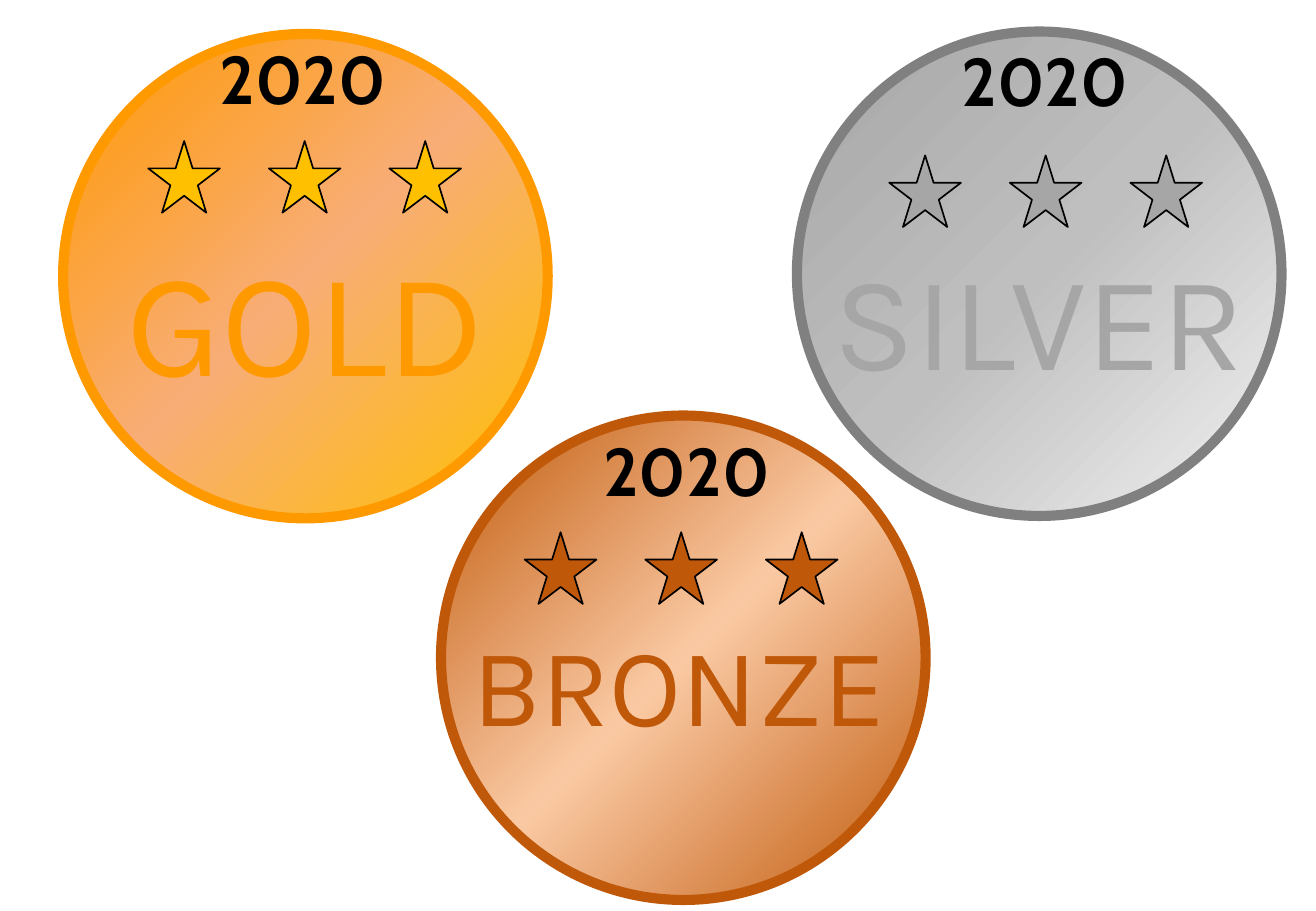
"""Build a slide with gold, silver and bronze medals."""
from copy import deepcopy

from pptx import Presentation
from pptx.dml.color import RGBColor
from pptx.enum.shapes import MSO_SHAPE
from pptx.enum.text import MSO_AUTO_SIZE, PP_ALIGN
from pptx.util import Cm, Pt

OVAL, STAR = MSO_SHAPE.OVAL, MSO_SHAPE.STAR_5_POINT
CENTER = PP_ALIGN.CENTER
GROW = MSO_AUTO_SIZE.SHAPE_TO_FIT_TEXT

MEDALS = [
    {"name": "SILVER", "size": 80, "ink": "A6A6A6", "rim": "808080",
     "shades": ["A6A6A6", "BFBFBF", "F2F2F2"], "star": "A6A6A6",
     "disc": (16.66, 0.66), "label": (16.66, 4.8, 10.13, 3.68),
     "stars": (18.59, 3.25), "year": (19.02, 0.69)},
    {"name": "GOLD", "size": 88, "ink": "FF9900", "rim": "FF9900",
     "shades": ["FF9900", "F8AD76", "FFC000"], "star": "FFC000",
     "disc": (1.32, 0.71), "label": (1.07, 4.65, 10.64, 4.01),
     "stars": (3.1, 2.95), "year": (3.51, 0.66)},
    {"name": "BRONZE", "size": 66, "ink": "C0580A", "rim": "C0580A",
     "shades": ["C0580A", "FAC9A3", "C0580A"], "star": "C0580A",
     "disc": (9.22, 8.69), "label": (9.14, 12.75, 10.13, 3.07),
     "stars": (10.97, 11.13), "year": (11.53, 8.84)},
]
YEAR = "2020"
DISC = 10.13
STAR_SIDE, STAR_STEP, STAR_COUNT = 1.5, 2.52, 3
YEAR_SIZE = (5.64, 1.96)


def paint(color, code):
    color.rgb = RGBColor.from_string(code)


def add_form(slide, kind, left, top, side, rim, width):
    form = slide.shapes.add_shape(kind, Cm(left), Cm(top), Cm(side), Cm(side))
    form.shadow.inherit = False
    paint(form.line.color, rim)
    form.line.width = Pt(width)
    return form


def shade(fill, stops, codes):
    fill.gradient_angle = 315
    first = stops[0]
    first.addnext(deepcopy(first))
    for index, (stop, code) in enumerate(zip(fill.gradient_stops, codes)):
        stop.position = index / (len(codes) - 1)
        paint(stop.color, code)


def add_text(slide, text, box, *, font, size, color, bold=False):
    frame = slide.shapes.add_textbox(*map(Cm, box)).text_frame
    frame.word_wrap = True
    frame.auto_size = GROW
    line = frame.paragraphs[0]
    line.alignment = CENTER
    run = line.add_run()
    run.text = text
    run.font.name = font
    run.font.size = Pt(size)
    run.font.bold = bold
    paint(run.font.color, color)


def add_medal(slide, medal):
    disc = add_form(slide, OVAL, *medal["disc"], DISC, medal["rim"], 6)
    disc.fill.gradient()
    stops = disc.element.xpath(".//a:gsLst/a:gs")
    shade(disc.fill, stops, medal["shades"])
    add_text(slide, medal["name"], medal["label"], font="Karla",
             size=medal["size"], color=medal["ink"])
    left, top = medal["stars"]
    for index in range(STAR_COUNT):
        star = add_form(slide, STAR, left + index * STAR_STEP, top,
                        STAR_SIDE, "000000", 1)
        star.fill.solid()
        paint(star.fill.fore_color, medal["star"])
    add_text(slide, YEAR, medal["year"] + YEAR_SIZE, font="Cabin",
             size=40, color="000000", bold=True)


def main():
    deck = Presentation()
    deck.slide_width, deck.slide_height = Cm(27.51), Cm(19.05)
    slide = deck.slides.add_slide(deck.slide_layouts[6])
    for medal in MEDALS:
        add_medal(slide, medal)
    deck.save("out.pptx")


if __name__ == "__main__":
    main()
